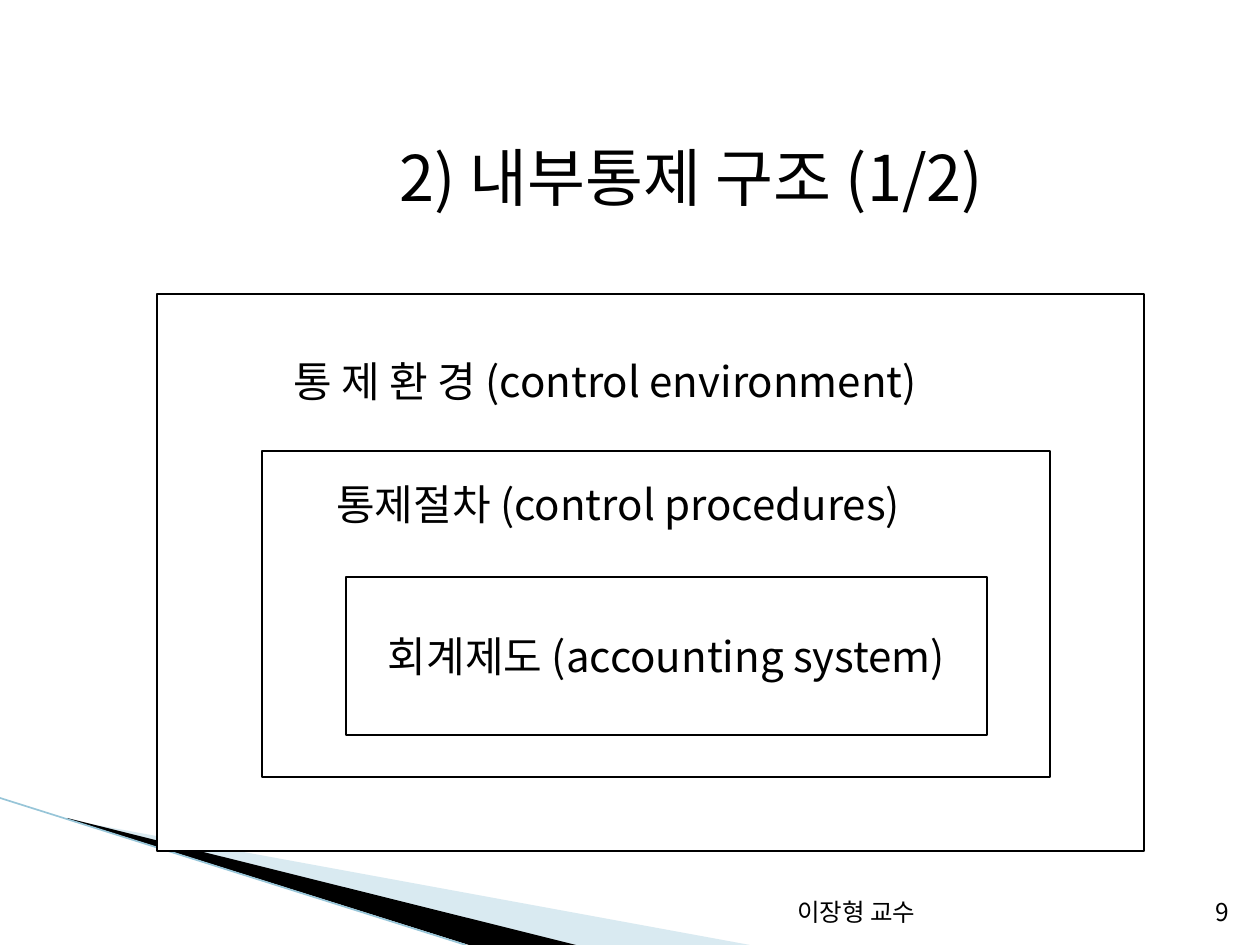
from dataclasses import dataclass

from lxml.etree import SubElement
from pptx import Presentation
from pptx.dml.color import RGBColor
from pptx.enum.shapes import MSO_CONNECTOR, MSO_SHAPE
from pptx.enum.text import MSO_ANCHOR as Anchor, MSO_AUTO_SIZE as AutoSize, PP_ALIGN as Align
from pptx.oxml.ns import qn
from pptx.util import Emu, Pt

PX = 914400 / 126
FONT = "Noto Sans CJK KR"
BLACK, WHITE = "000000", "FFFFFF"


@dataclass
class Box:
    left: int
    top: int
    width: int
    height: int


@dataclass
class Label:
    text: str
    box: Box
    size: int = 24
    align: Align = Align.LEFT
    anchor: Anchor = Anchor.TOP
    wrap: bool = False


@dataclass
class Wedge:
    points: list[tuple[int, int]]
    fill: str
    opacity: int = 100


def px(value: int) -> Emu:
    return Emu(round(value * PX))


def bounds(box: Box) -> list[Emu]:
    return [px(value) for value in (box.left, box.top, box.width, box.height)]


def color(value: str) -> RGBColor:
    return RGBColor.from_string(value)


def set_attributes(target, values: dict) -> None:
    for name, value in values.items():
        setattr(target, name, value)


def write_label(shape, label: Label) -> None:
    left, top, width, height = bounds(label.box)
    set_attributes(shape, {"left": left, "top": top, "width": width, "height": height})
    frame = shape.text_frame
    set_attributes(frame, {"word_wrap": label.wrap, "auto_size": AutoSize.NONE,
                           "vertical_anchor": label.anchor})
    paragraph = frame.paragraphs[0]
    paragraph.alignment = label.align
    run = paragraph.add_run()
    run.text = label.text
    set_attributes(run.font, {"name": FONT, "size": Pt(label.size)})
    run.font.color.rgb = color(BLACK)
    SubElement(run.font._element, qn("a:ea"), typeface=FONT)


def add_label(shapes, label: Label) -> None:
    write_label(shapes.add_textbox(*bounds(label.box)), label)


def add_frame(shapes, box: Box):
    shape = shapes.add_shape(MSO_SHAPE.RECTANGLE, *bounds(box))
    shape.shadow.inherit = False
    shape.fill.solid()
    shape.fill.fore_color.rgb = color(WHITE)
    shape.line.color.rgb = color(BLACK)
    shape.line.width = Pt(0.75)
    return shape


def add_wedge(shapes, wedge: Wedge) -> None:
    builder = shapes.build_freeform(*wedge.points[0], scale=PX)
    builder.add_line_segments(wedge.points[1:], close=True)
    shape = builder.convert_to_shape()
    shape.shadow.inherit = False
    shape.line.fill.background()
    shape.fill.solid()
    shape.fill.fore_color.rgb = color(wedge.fill)
    if wedge.opacity < 100:
        fill_color = shape._element.spPr.find(qn("a:solidFill"))[0]
        SubElement(fill_color, qn("a:alpha"), val=str(wedge.opacity * 1000))


TITLE = Label("2) 내부통제 구조 (1/2)", Box(387, 132, 672, 88), size=36)
WEDGES = [
    Wedge([(69, 820), (750, 945), (575, 945), (69, 819)], "A0CBDC", 40),
    Wedge([(67, 818), (576, 945), (469, 945), (68, 819)], BLACK),
]
OUTER_FRAMES = [Box(157, 294, 987, 557), Box(262, 451, 788, 326)]
CORE = Label("회계제도 (accounting system)", Box(346, 577, 641, 158),
             align=Align.CENTER, anchor=Anchor.MIDDLE)
FRAME_LABELS = [
    Label("통 제 환 경 (control environment)", Box(281, 349, 670, 63)),
    Label("통제절차 (control procedures)", Box(324, 472, 611, 63)),
]
FOOTERS = [
    Label(text, Box(left, 883, width, 50), 14, Align.RIGHT, Anchor.BOTTOM, True)
    for text, left, width in (("이장형 교수", 604, 324), ("9", 1192, 50))
]


def main() -> None:
    presentation = Presentation()
    set_attributes(presentation, {"slide_width": px(1260), "slide_height": px(945)})
    slide = presentation.slides.add_slide(presentation.slide_layouts[5])
    shapes = slide.shapes
    write_label(shapes.title, TITLE)

    # Corner decoration
    for wedge in WEDGES:
        add_wedge(shapes, wedge)
    edge = shapes.add_connector(MSO_CONNECTOR.STRAIGHT, px(0), px(798), px(466), px(945))
    edge.line.color.rgb = color("97C5D8")
    edge.line.width = Pt(0.95)
    SubElement(edge._element.spPr, qn("a:effectLst"))

    # Nested layers of internal control
    layers = shapes.add_group_shape().shapes
    for box in OUTER_FRAMES:
        add_frame(layers, box)
    write_label(add_frame(layers, CORE.box), CORE)
    for label in FRAME_LABELS:
        add_label(layers, label)

    # Footer and page number
    for label in FOOTERS:
        add_label(shapes, label)

    presentation.save("out.pptx")


if __name__ == "__main__":
    main()
